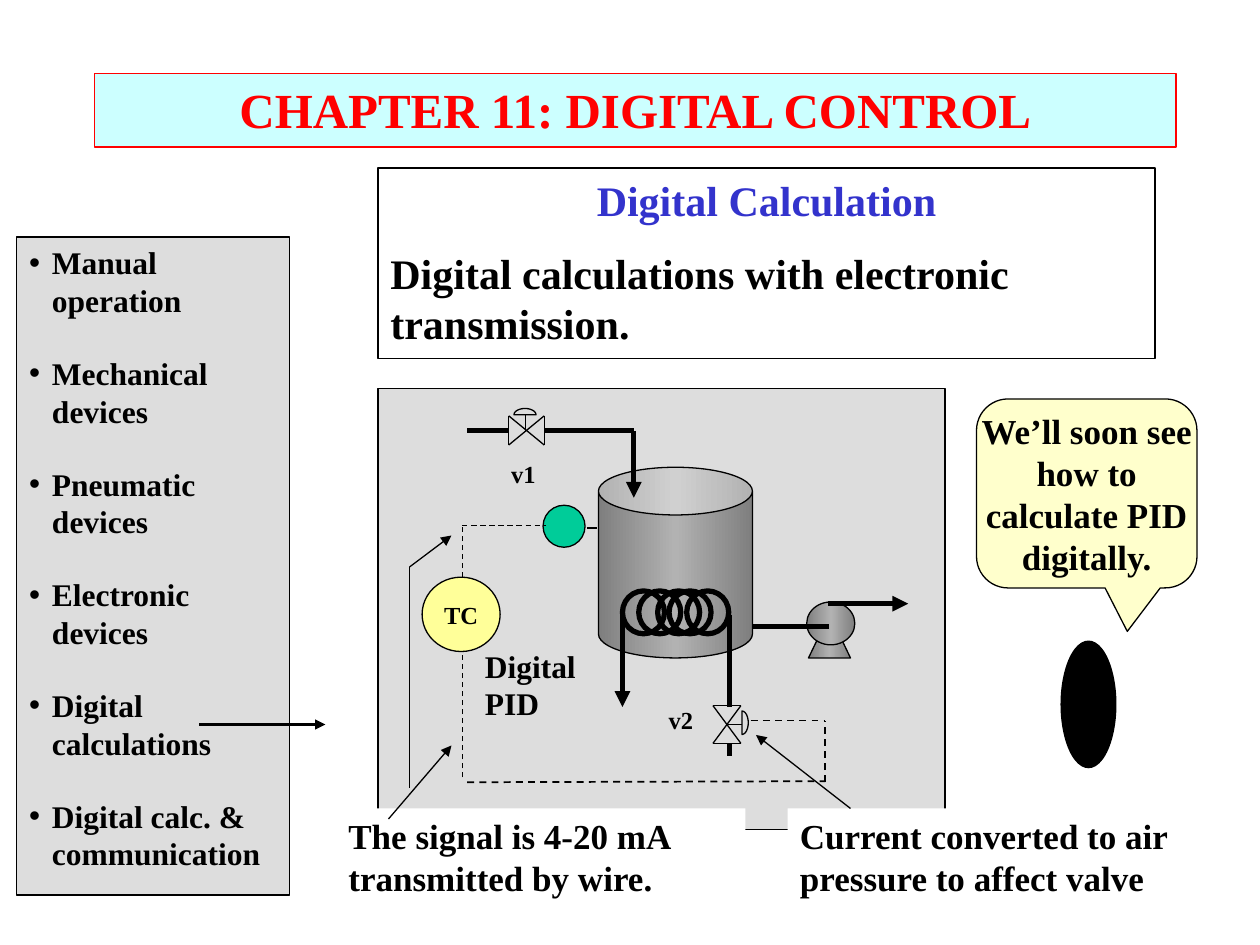
"""Build the chapter slide on digital control with its stirred-tank diagram."""
import copy
import math

from lxml import etree
from pptx import Presentation
from pptx.dml import color
from pptx.enum import dml, shapes, text
from pptx.oxml import ns
from pptx.util import Pt

BLACK = color.RGBColor(0, 0, 0)
WHITE = color.RGBColor(255, 255, 255)
RED = color.RGBColor(255, 0, 0)
BLUE = color.RGBColor(0x33, 0x33, 0xCC)
CYAN = color.RGBColor(0xCC, 0xFF, 0xFF)
GREY = color.RGBColor(0xDD, 0xDD, 0xDD)
CREAM = color.RGBColor(0xFF, 0xFF, 0xCC)
YELLOW = color.RGBColor(0xFF, 0xFF, 0x99)
GREEN = color.RGBColor(0, 0xCC, 0x99)
METAL = [color.RGBColor(*[level] * 3) for level in (0x7F, 0xB2, 0x7F)]
FONT = "Times New Roman"
SHAPE = shapes.MSO_SHAPE
CENTER = text.PP_ALIGN.CENTER

TITLE = "CHAPTER 11: DIGITAL CONTROL"
METHODS = ["Manual operation", "Mechanical devices", "Pneumatic devices",
           "Electronic devices", "Digital calculations",
           "Digital calc. & communication"]
INTRO = ["Digital Calculation", "Digital calculations with electronic transmission."]
REMARK = ["We’ll soon see", "how to", "calculate PID", "digitally."]
NOTES = [("The signal is 4-20 mA transmitted by wire.", (192, 462, 234, 55.5)),
         ("Current converted to air pressure to affect valve", (450, 462, 240, 55.5))]
VALVE_LABELS = [("v1", (285, 258.5, 42.5, 24)), ("v2", (375, 399.5, 42, 24))]
COIL_LEFTS = [365, 355.7, 375.8, 382.3, 392.4]

POINTERS = [(114, 414, 186, 414, 1.5), (486, 462, 432, 420, 0.75),
            (222, 468, 258, 426, 0.75), (234, 324, 258, 306, 0.75)]
FLOW_ARROWS = [(355.7, 351.5, 355.7, 404, 3), (473, 345, 519, 345, 3),
               (362.2, 246.2, 362.2, 284.4, 3)]
PIPES = [(417, 351.5, 417, 404, 3), (473.8, 357.8, 429.8, 357.8, 3),
         (417, 424.8, 417, 432, 3), (362.2, 246.2, 311, 246.2, 3),
         (291, 246.2, 267, 246.2, 3), (335.5, 301.7, 341.3, 301.7, 0.75),
         (234, 450, 234, 324, 0.75)]
SIGNALS = [(267, 447, 471.6, 446.4, 1), (471.6, 447, 471.6, 411.8, 1),
           (429, 411.8, 471.6, 411.8, 1), (264.2, 444.2, 264.2, 372.2, 0.75),
           (264.2, 329.8, 264.2, 300.2, 0.75), (264.2, 300.2, 311.8, 300.2, 0.75)]

deck = Presentation()
deck.slide_width, deck.slide_height = Pt(720), Pt(540)
slide = deck.slides.add_slide(deck.slide_layouts[1])


def paint(part, fill=None, outline=BLACK, width=0.75):
    if fill is None:
        part.fill.background()
    else:
        part.fill.solid()
        part.fill.fore_color.rgb = fill
    if outline is None:
        part.line.fill.background()
    else:
        part.line.color.rgb = outline
        part.line.width = Pt(width)


def place(part, box):
    part.left, part.top, part.width, part.height = map(Pt, box)


def write(part, lines, size, ink=BLACK, align=None, gap=0, wrap=True,
          anchor=text.MSO_ANCHOR.TOP):
    frame = part.text_frame
    frame.text = "\n".join(lines)
    frame.auto_size = text.MSO_AUTO_SIZE.NONE
    frame.word_wrap = wrap
    frame.vertical_anchor = anchor
    for index, paragraph in enumerate(frame.paragraphs):
        paragraph.alignment = align
        paragraph.space_before = Pt(gap if index else 0)
        font = paragraph.font
        font.name, font.size, font.bold = FONT, Pt(size), True
        font.color.rgb = ink
    return frame.paragraphs


def add_text(lines, box, size, **style):
    part = slide.shapes.add_textbox(*map(Pt, box))
    write(part, lines, size, **style)
    return part


def add_part(kind, box, fill=None, outline=BLACK, width=0.75):
    part = slide.shapes.add_shape(kind, *map(Pt, box))
    part.shadow.inherit = False
    paint(part, fill, outline, width)
    return part


def add_metal(kind, box):
    part = add_part(kind, box)
    part.fill.gradient()
    part.fill.gradient_angle = 0
    stops = part._element.spPr.find(ns.qn("a:gradFill")).find(ns.qn("a:gsLst"))
    stops.insert(1, copy.deepcopy(stops[0]))
    for index, (stop, tone) in enumerate(zip(part.fill.gradient_stops, METAL)):
        stop.position = index / 2
        stop.color.rgb = tone
    return part


def add_line(x1, y1, x2, y2, width=0.75, dashed=False, arrow=False):
    link = slide.shapes.add_connector(
        shapes.MSO_CONNECTOR.STRAIGHT, *map(Pt, (x1, y1, x2, y2)))
    link.line.color.rgb = BLACK
    link.line.width = Pt(width)
    if dashed:
        link.line.dash_style = dml.MSO_LINE.DASH
    properties = link._element.spPr
    if arrow:
        etree.SubElement(properties.find(ns.qn("a:ln")), ns.qn("a:tailEnd"),
                         type="triangle")
    etree.SubElement(properties, ns.qn("a:effectLst"))


def add_valve(corners, stem, cap_center, radius, bulge, turn):
    for start, end in zip(corners, corners[1:] + corners[:1]):
        add_line(*start, *end)
    add_line(*stem)
    arc = []
    for step in range(13):
        angle = math.pi * step / 12
        across, out = radius * math.cos(angle), bulge * math.sin(angle)
        dx, dy = (out, across) if turn else (across, -out)
        arc.append((Pt(cap_center[0] + dx), Pt(cap_center[1] + dy)))
    outline = slide.shapes.build_freeform(*arc[0])
    outline.add_line_segments(arc[1:], close=True)
    cap = outline.convert_to_shape()
    cap.shadow.inherit = False
    paint(cap)


heading, methods = slide.placeholders
place(heading, (54, 42, 618, 42))
paint(heading, CYAN, RED)
write(heading, [TITLE], 28, RED, CENTER)

place(methods, (9.5, 135.5, 156, 376))
paint(methods, GREY)
for item in write(methods, METHODS, 18, gap=20):
    item._p.get_or_add_pPr().set("marL", str(Pt(13)))
    item._p.get_or_add_pPr().set("indent", str(Pt(-13)))

intro = add_text(INTRO, (216, 96, 444, 109), 24, gap=13)
paint(intro)
lead = intro.text_frame.paragraphs[0]
lead.alignment = CENTER
lead.font.color.rgb = BLUE

add_part(SHAPE.RECTANGLE, (216, 222, 324, 252), GREY)
for note, box in NOTES:
    paint(add_text([note], box, 20), WHITE, None)

add_part(SHAPE.OVAL, (606, 366, 32, 73), BLACK, None)
remark = add_part(SHAPE.ROUNDED_RECTANGULAR_CALLOUT, (558, 228, 126, 108), CREAM)
for index, value in enumerate((0.184, 0.73, 0.167)):
    remark.adjustments[index] = value
write(remark, REMARK, 20, align=CENTER, wrap=False, anchor=text.MSO_ANCHOR.MIDDLE)

tank = add_metal(SHAPE.CAN, (342, 267, 88, 109))
tank.adjustments[0] = 0.31
pump_base = add_metal(SHAPE.FLOWCHART_MANUAL_OPERATION, (462, 366, 24, 10))
pump_base.rotation = 180
add_metal(SHAPE.OVAL, (461, 344, 27.5, 24.5))
for left in COIL_LEFTS:
    add_part(SHAPE.FLOWCHART_CONNECTOR, (left, 337.7, 24, 24.5), width=3)

add_valve([(290.7, 254.3), (290.7, 237.6), (311, 254.3), (311, 237.6)],
          (300.2, 246.2, 300.2, 237), (300, 237), 6.3, 3.6, turn=False)
add_valve([(407.4, 403.2), (423.4, 403.2), (407.4, 424.8), (423.4, 424.8)],
          (415.4, 414, 424, 414), (424, 413), 6.7, 3.6, turn=True)

controller = add_part(SHAPE.OVAL, (241.2, 329.8, 44.6, 42.5), YELLOW)
write(controller, ["TC"], 14, align=CENTER, wrap=False, anchor=text.MSO_ANCHOR.MIDDLE)
add_part(SHAPE.OVAL, (310.3, 288.7, 24, 24), GREEN)

for run in PIPES:
    add_line(*run)
for run in SIGNALS:
    add_line(*run, dashed=True)
for run in POINTERS + FLOW_ARROWS:
    add_line(*run, arrow=True)

for label, box in VALVE_LABELS:
    add_text([label], box, 14)
add_text(["Digital", "PID"], (270, 366, 72, 50), 18)

deck.save("out.pptx")
